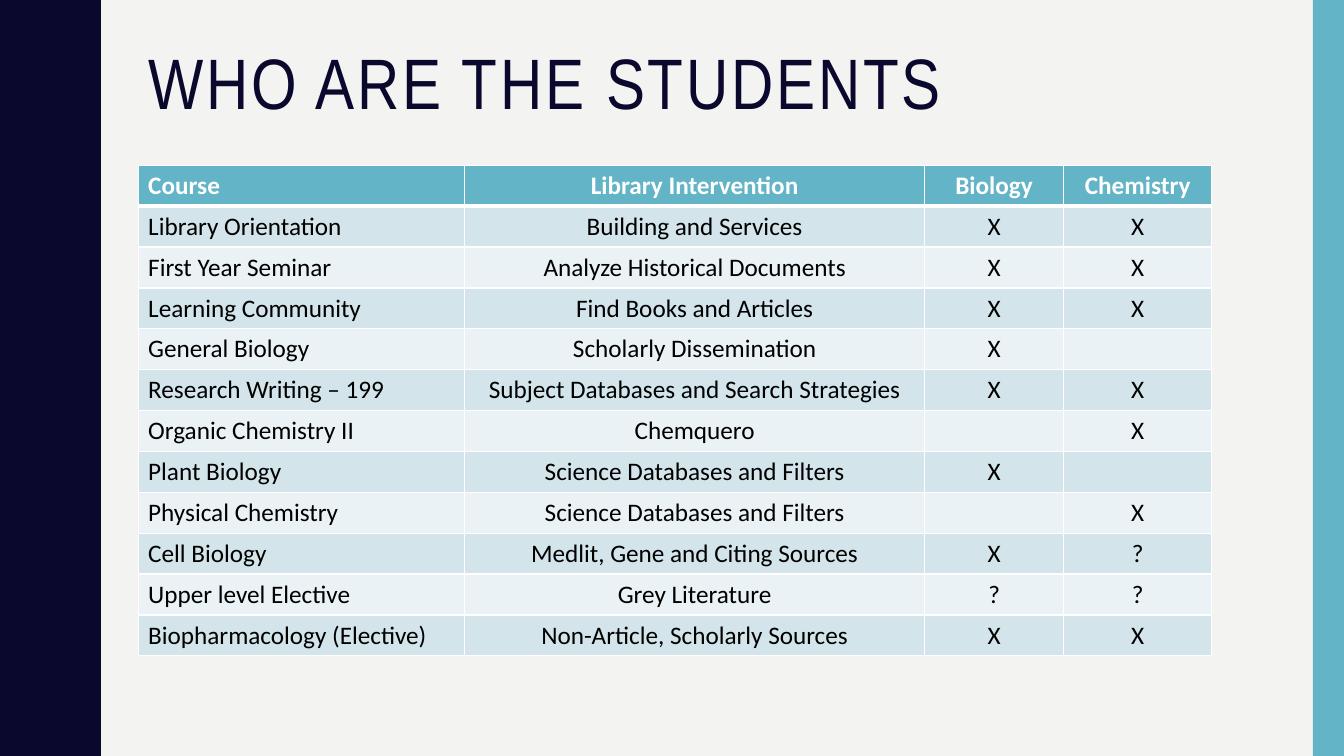
import pptx
import pptx.dml.color
import pptx.enum.shapes
import pptx.enum.text
import pptx.oxml
import pptx.oxml.ns
import pptx.util

Inches = pptx.util.Inches
ALIGN = pptx.enum.text.PP_ALIGN
ANCHOR = pptx.enum.text.MSO_ANCHOR

COLORS = {
    "background": "F3F3F2",
    "navy": "0B082E",
    "teal": "62B4C6",
    "band_dark": "D3E5EA",
    "band_light": "EAF2F5",
    "white": "FFFFFF",
    "black": "000000",
}

HEADER = ("Course", "Library Intervention", "Biology", "Chemistry")
COURSES = [
    ("Library Orientation", "Building and Services", "X", "X"),
    ("First Year Seminar", "Analyze Historical Documents", "X", "X"),
    ("Learning Community", "Find Books and Articles", "X", "X"),
    ("General Biology", "Scholarly Dissemination", "X", ""),
    ("Research Writing – 199", "Subject Databases and Search Strategies", "X", "X"),
    ("Organic Chemistry II", "Chemquero", "", "X"),
    ("Plant Biology", "Science Databases and Filters", "X", ""),
    ("Physical Chemistry", "Science Databases and Filters", "", "X"),
    ("Cell Biology", "Medlit, Gene and Citing Sources", "X", "?"),
    ("Upper level Elective", "Grey Literature", "?", "?"),
    ("Biopharmacology (Elective)", "Non-Article, Scholarly Sources", "X", "X"),
]
COLUMN_WIDTHS = (3.24, 4.56, 1.38, 1.47)
TABLE_HEIGHT = 4.87

# Left edge of the wave, from a trough to the next crest
HALF_WAVE = [
    (0.78, 0), (0.78, 0.07), (0.79, 0.14), (0.8, 0.2), (0.81, 0.25),
    (0.83, 0.29), (0.85, 0.33), (0.87, 0.38), (0.89, 0.42), (0.91, 0.46),
    (0.93, 0.5), (0.95, 0.55), (0.96, 0.61), (0.97, 0.68), (0.97, 0.75),
]
WAVE_LENGTH = 1.5
WAVE_COUNT = 5


def rgb(name):
    return pptx.dml.color.RGBColor.from_string(COLORS[name])


def write_text(frame, text, font="Calibri", size=18, color="black", bold=False,
               align=ALIGN.LEFT, line_spacing=None, tracking=None):
    """Fill a text frame with one formatted paragraph; tracking is in points."""
    paragraph = frame.paragraphs[0]
    paragraph.alignment = align
    if line_spacing:
        paragraph.line_spacing = line_spacing
    if not text:
        paragraph.font.size = pptx.util.Pt(size)
        return
    run = paragraph.add_run()
    run.text = text
    run.font.name = font
    run.font.size = pptx.util.Pt(size)
    run.font.bold = bold
    run.font.color.rgb = rgb(color)
    if tracking:
        run.font._element.set("spc", str(tracking * 100))


def set_borders(cell, **widths):
    """Draw white borders; widths in points are keyed L, R, T and B."""
    properties = cell._tc.get_or_add_tcPr()
    for index, side in enumerate("LRTB"):
        line = pptx.oxml.parse_xml(
            f'<a:ln{side} {pptx.oxml.ns.nsdecls("a")} w="{pptx.util.Pt(widths.get(side, 1))}">'
            f'<a:solidFill><a:srgbClr val="{COLORS["white"]}"/></a:solidFill></a:ln{side}>')
        properties.insert(index, line)


class SlideBuilder:
    """Holds the slide and the style shared by its elements."""

    def __init__(self, presentation):
        self.slide = presentation.slides.add_slide(presentation.slide_layouts[5])
        self.shapes = self.slide.shapes
        self.slide.background.fill.solid()
        self.slide.background.fill.fore_color.rgb = rgb("background")

    def paint(self, shape, color):
        shape.shadow.inherit = False
        shape.fill.solid()
        shape.fill.fore_color.rgb = rgb(color)
        shape.line.fill.background()

    def wave(self, color):
        period = HALF_WAVE + [(x, WAVE_LENGTH - y) for x, y in HALF_WAVE[-2::-1]]
        edge = [(x, y + number * WAVE_LENGTH)
                for number in range(WAVE_COUNT) for x, y in period]
        outline = self.shapes.build_freeform(0, 0, scale=Inches(1))
        outline.add_line_segments(edge + [(0, WAVE_COUNT * WAVE_LENGTH)], close=True)
        self.paint(outline.convert_to_shape(), color)

    def bar(self, left, top, width, height, color):
        bar = self.shapes.add_shape(
            pptx.enum.shapes.MSO_SHAPE.RECTANGLE,
            Inches(left), Inches(top), Inches(width), Inches(height))
        self.paint(bar, color)

    def title(self, text, left, top, width, height):
        title = self.shapes.title
        title.left, title.top = Inches(left), Inches(top)
        title.width, title.height = Inches(width), Inches(height)
        frame = title.text_frame
        frame.word_wrap = True
        frame.auto_size = pptx.enum.text.MSO_AUTO_SIZE.NONE
        frame.vertical_anchor = ANCHOR.TOP
        write_text(frame, text, font="Arial Narrow", size=51, color="navy",
                   line_spacing=0.9, tracking=2)

    def table(self, rows, left, top, widths, height):
        table = self.shapes.add_table(
            len(rows), len(widths), Inches(left), Inches(top),
            Inches(sum(widths)), Inches(height)).table
        for column, width in zip(table.columns, widths):
            column.width = Inches(width)
        for row_index, values in enumerate(rows):
            table.rows[row_index].height = Inches(height / len(rows))
            for column_index, value in enumerate(values):
                self.cell(table.cell(row_index, column_index), value,
                          row_index, column_index)

    def cell(self, cell, value, row_index, column_index):
        is_header = row_index == 0
        band = "band_dark" if row_index % 2 else "band_light"
        cell.fill.solid()
        cell.fill.fore_color.rgb = rgb("teal" if is_header else band)
        cell.vertical_anchor = ANCHOR.MIDDLE if is_header and column_index else ANCHOR.TOP
        write_text(cell.text_frame, value, bold=is_header,
                   color="white" if is_header else "black",
                   align=ALIGN.CENTER if column_index else ALIGN.LEFT)
        set_borders(cell, B=3 if is_header else 1, T=3 if row_index == 1 else 1)


def main():
    presentation = pptx.Presentation()
    presentation.slide_width = Inches(13.33)
    presentation.slide_height = Inches(7.5)

    students = SlideBuilder(presentation)
    students.wave("navy")
    students.bar(13.02, 0, 0.31, 7.5, "teal")
    students.title("WHO ARE THE STUDENTS", 1.37, 0.42, 11.13, 1.63)
    students.table([HEADER] + COURSES, 1.37, 1.64, COLUMN_WIDTHS, TABLE_HEIGHT)

    presentation.save("out.pptx")


if __name__ == "__main__":
    main()
